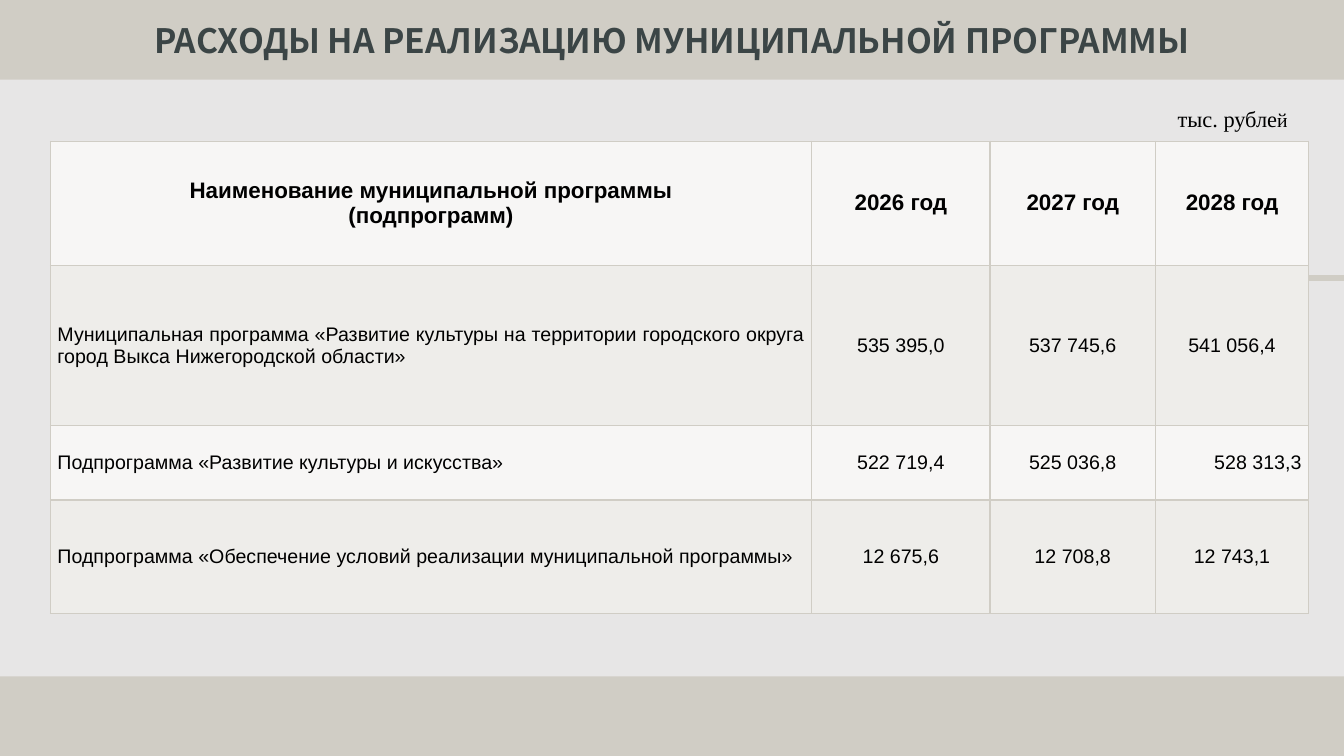
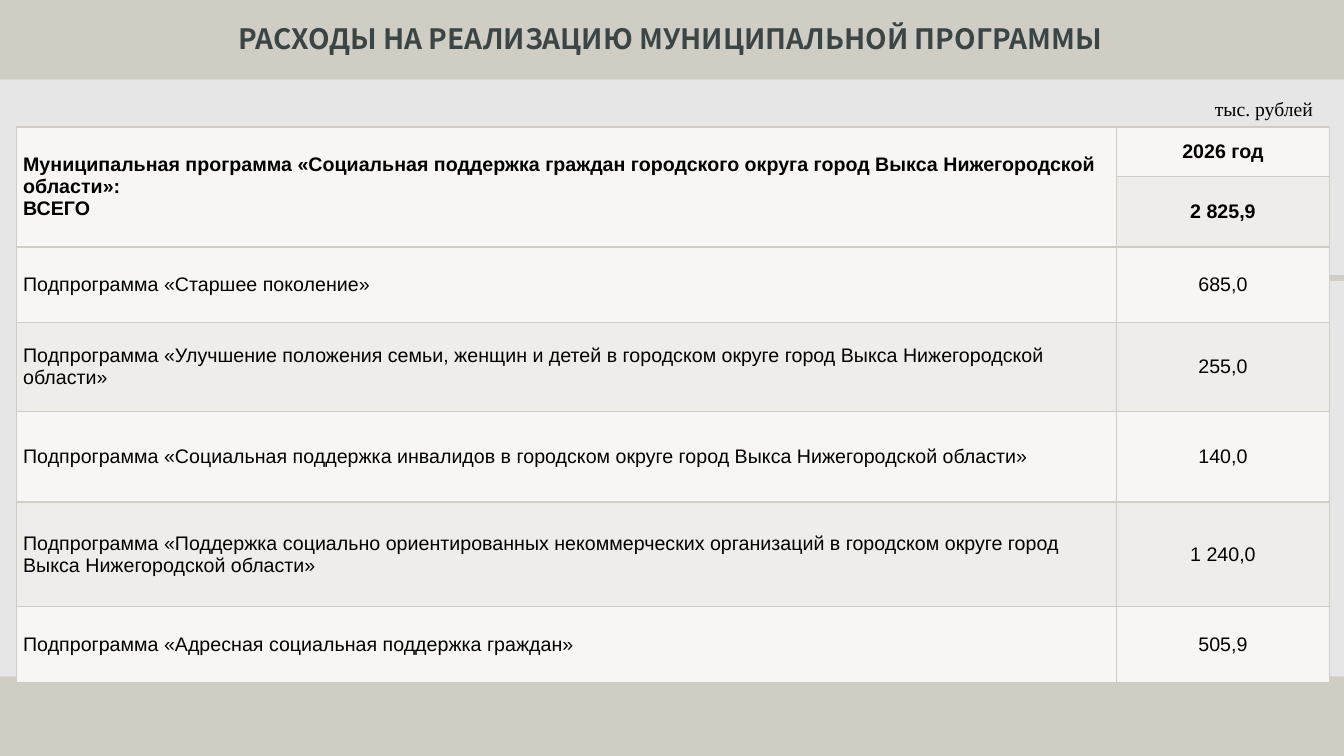
from lxml import etree
from pptx import Presentation
from pptx.dml.color import RGBColor
from pptx.enum import shapes, text
from pptx.oxml import ns
from pptx.util import Inches, Pt

COLORS = {"base": "D0CDC5", "panel": "E7E6E6", "title": "3B4546",
          "text": "000000", "light": "F7F6F5", "dark": "EEEDEA"}
SANS, SERIF, HEAD = "Arial", "Times New Roman", "Noto Sans CJK JP"
TITLE = "РАСХОДЫ НА РЕАЛИЗАЦИЮ МУНИЦИПАЛЬНОЙ ПРОГРАММЫ"
LEFT, MID = text.PP_ALIGN.LEFT, text.PP_ALIGN.CENTER
RIGHT, FULL = text.PP_ALIGN.RIGHT, text.PP_ALIGN.JUSTIFY

CULTURE = [
    ["Наименование муниципальной программы\v(подпрограмм)",
     "2026 год", "2027 год", "2028 год"],
    ["Муниципальная программа «Развитие культуры на территории городского "
     "округа город Выкса Нижегородской области»",
     "535 395,0", "537 745,6", "541 056,4"],
    ["Подпрограмма «Развитие культуры и искусства»",
     "522 719,4", "525 036,8", "528 313,3"],
    ["Подпрограмма «Обеспечение условий реализации муниципальной программы»",
     "12 675,6", "12 708,8", "12 743,1"],
]
SOCIAL = [
    ["Муниципальная программа «Социальная поддержка граждан городского "
     "округа город Выкса Нижегородской области»:\nВСЕГО", "2026 год"],
    ["", "2 825,9"],
    ["Подпрограмма «Старшее поколение»", "685,0"],
    ["Подпрограмма «Улучшение положения семьи, женщин и детей в городском "
     "округе город Выкса Нижегородской области»", "255,0"],
    ["Подпрограмма «Социальная поддержка инвалидов в городском округе "
     "город Выкса Нижегородской области»", "140,0"],
    ["Подпрограмма «Поддержка социально ориентированных некоммерческих "
     "организаций в городском округе город Выкса Нижегородской области»",
     "1 240,0"],
    ["Подпрограмма «Адресная социальная поддержка граждан»", "505,9"],
]


def rgb(name):
    return RGBColor.from_string(COLORS[name])


def style(run, face, size, color="text", bold=False):
    run.font.name, run.font.size, run.font.bold = face, Pt(size), bold
    run.font.color.rgb = rgb(color)


# Background, panel and side rule
def frame(deck):
    page = deck.slides.add_slide(deck.slide_layouts[6])
    page.background.fill.solid()
    page.background.fill.fore_color.rgb = rgb("base")
    panel = page.shapes.add_shape(shapes.MSO_SHAPE.RECTANGLE, 0, Inches(0.79),
                                  deck.slide_width, Inches(5.92))
    panel.shadow.inherit = False
    panel.fill.solid()
    panel.fill.fore_color.rgb = rgb("panel")
    panel.line.fill.background()
    rule = page.shapes.add_connector(
        shapes.MSO_CONNECTOR.STRAIGHT, Inches(8.15), Inches(2.76),
        deck.slide_width, Inches(2.76))
    rule.line.color.rgb = rgb("base")
    rule.line.width = Pt(4.5)
    etree.SubElement(rule._element.spPr, ns.qn("a:effectLst"))
    return page


def label(page, box, align):
    area = page.shapes.add_textbox(*map(Inches, box)).text_frame
    area.word_wrap = True
    area.paragraphs[0].alignment = align
    return area


def title(page, box, size):
    area = label(page, box, MID)
    area.vertical_anchor = text.MSO_ANCHOR.MIDDLE
    para = area.paragraphs[0]
    para.text = TITLE
    para.line_spacing = 0.8
    style(para.runs[0], HEAD, size, "title", True)


def unit(page, box, *parts):
    para = label(page, box, RIGHT).paragraphs[0]
    for words, size in parts:
        run = para.add_run()
        run.text = words
        style(run, SERIF, size)


# Table cells
def border(cell):
    props = cell._tc.get_or_add_tcPr()
    for spot, side in enumerate(("lnL", "lnR", "lnT", "lnB")):
        edge = etree.Element(ns.qn("a:" + side), w=str(Pt(1)))
        fill = etree.SubElement(edge, ns.qn("a:solidFill"))
        etree.SubElement(fill, ns.qn("a:srgbClr"), val=COLORS["base"])
        props.insert(spot, edge)


def put(cell, words, band, align, size, bold):
    cell.text_frame.text = words
    cell.vertical_anchor = text.MSO_ANCHOR.MIDDLE
    cell.margin_left = cell.margin_right = Inches(0.07)
    cell.margin_top = cell.margin_bottom = 0
    cell.fill.solid()
    cell.fill.fore_color.rgb = rgb(band)
    border(cell)
    for para in cell.text_frame.paragraphs:
        para.alignment = align
        for run in para.runs:
            style(run, SANS, size, bold=bold)


def grid(page, spot, cols, rows, data, heads, size, aligns):
    box = map(Inches, (*spot, sum(cols), sum(rows)))
    table = page.shapes.add_table(len(rows), len(cols), *box).table
    for col, width in zip(table.columns, cols):
        col.width = Inches(width)
    for y, (high, line) in enumerate(zip(rows, data)):
        table.rows[y].height = Inches(high)
        for x, words in enumerate(line):
            put(table.cell(y, x), words, ("light", "dark")[y % 2],
                aligns.get((y, x), MID if x else LEFT),
                size if y < heads else 14, y < heads)
    return table


def main():
    deck = Presentation()
    deck.slide_width, deck.slide_height = Inches(13.33), Inches(7.5)

    # Culture programme
    page = frame(deck)
    title(page, (0.18, 0.12, 12.97, 0.62), 24)
    grid(page, (0.5, 1.4), (7.55, 1.77, 1.64, 1.52), (1.23, 1.59, 0.74, 1.13),
         CULTURE, 1, 16, {(0, 0): MID, (1, 0): FULL, (2, 3): RIGHT})
    unit(page, (11.47, 0.99, 1.4, 0.37), ("тыс. рубле", 16), ("й", 14))

    # Social support programme
    page = frame(deck)
    title(page, (0.1, 0.23, 13.1, 0.37), 20)
    table = grid(page, (0.16, 1.26), (10.91, 2.12),
                 (0.49, 0.65, 0.75, 0.88, 0.9, 1.04, 0.75),
                 SOCIAL, 2, 14, {})
    table.cell(0, 0).merge(table.cell(1, 0))
    unit(page, (11.8, 0.91, 1.32, 0.34), ("тыс. рублей", 14))

    deck.save("out.pptx")


if __name__ == "__main__":
    main()
